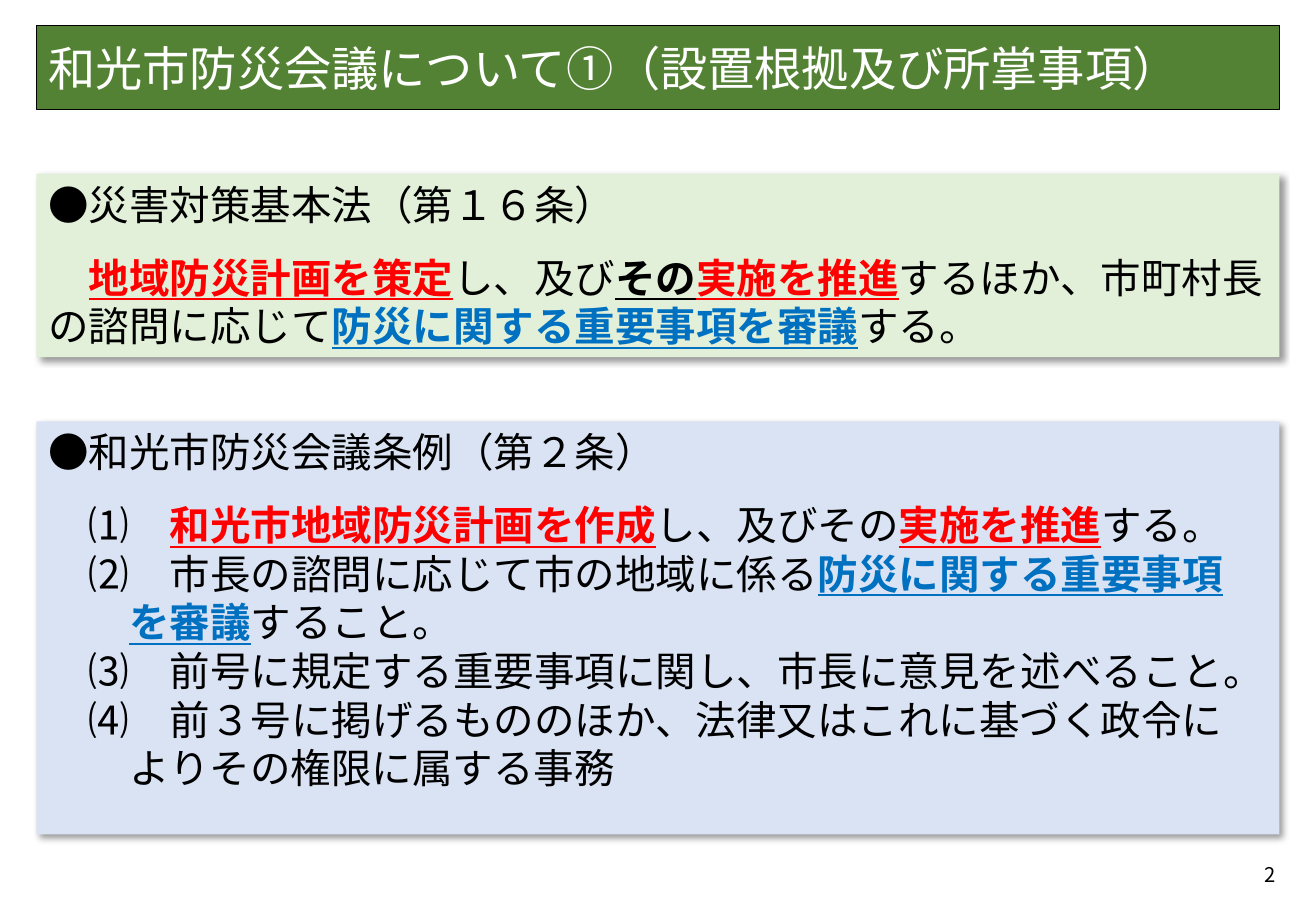
from lxml import etree
from pptx import Presentation
from pptx import util as u
from pptx.dml import color
from pptx.enum import lang, shapes, text
from pptx.oxml import ns

PX = 9144
FONT = "Noto Sans CJK JP"
BLACK = color.RGBColor(0x00, 0x00, 0x00)
WHITE = color.RGBColor(0xFF, 0xFF, 0xFF)
RED = color.RGBColor(0xFF, 0x00, 0x00)
BLUE = color.RGBColor(0x00, 0x70, 0xC0)
GREEN = color.RGBColor(0x54, 0x82, 0x35)
PALE_GREEN = color.RGBColor(0xE2, 0xF0, 0xD9)
PALE_BLUE = color.RGBColor(0xDA, 0xE3, 0xF3)

LEFT, WIDTH = 30, 1023
BODY_SIZE = 24
LINE_PITCH = u.Pt(28.8)
HEADING_GAP = u.Pt(14.4)
LINE_BREAK = "\n"

LAW = [
    ("地域防災計画を策定", RED), "し、及び", ("その", BLACK), ("実施を推進", RED),
    "するほか、市町村長の諮問に応じて", ("防災に関する重要事項を審議", BLUE), "する。",
]
ORDINANCE = [
    ["⑴　", ("和光市地域防災計画を作成", RED), "し、及びその", ("実施を推進", RED), "する。"],
    ["⑵　市長の諮問に応じて市の地域に係る", ("防災に関する重要事項", BLUE),
     LINE_BREAK, ("を審議", BLUE), "すること。"],
    ["⑶　前号に規定する重要事項に関し、市長に意見を述べること。"],
    ["⑷　前３号に掲げるもののほか、法律又はこれに基づく政令に",
     LINE_BREAK, "よりその権限に属する事務"],
]


def add_span(para, content, size=BODY_SIZE, ink=BLACK, emphasis=False):
    span = para.add_run()
    span.text = content
    font = span.font
    font.size = u.Pt(size)
    font.bold = font.underline = emphasis
    font.color.rgb = ink
    font.name = FONT
    font.language_id = lang.MSO_LANGUAGE_ID.JAPANESE
    etree.SubElement(span._r.get_or_add_rPr(), ns.qn("a:ea"), typeface=FONT)


def add_spans(para, spans):
    for span in spans:
        if span == LINE_BREAK:
            para.add_line_break()
        elif isinstance(span, str):
            add_span(para, span)
        else:
            add_span(para, span[0], ink=span[1], emphasis=True)


def set_layout(para, margin=0, indent=0, before=0):
    para.alignment = text.PP_ALIGN.LEFT
    para.line_spacing = LINE_PITCH
    para.space_before = before
    properties = para._p.get_or_add_pPr()
    properties.set("marL", str(u.Pt(margin)))
    properties.set("indent", str(u.Pt(indent)))


def add_box(page, top, height, fill, anchor):
    box = page.shapes.add_shape(shapes.MSO_SHAPE.RECTANGLE,
                                LEFT * PX, top * PX, WIDTH * PX, height * PX)
    box.shadow.inherit = False
    box.fill.solid()
    box.fill.fore_color.rgb = fill
    box.line.fill.background()
    box.text_frame.word_wrap = True
    box.text_frame.vertical_anchor = anchor
    return box


def add_shadow(box):
    effects = box._element.spPr.find(ns.qn("a:effectLst"))
    shadow = etree.SubElement(effects, ns.qn("a:outerShdw"), blurRad=str(u.Pt(4)),
                              dist=str(u.Pt(3)), dir="2700000", algn="tl", rotWithShape="0")
    tint = etree.SubElement(shadow, ns.qn("a:srgbClr"), val=str(BLACK))
    etree.SubElement(tint, ns.qn("a:alpha"), val="40000")


def add_title(page, content):
    box = add_box(page, 21, 69, GREEN, text.MSO_ANCHOR.MIDDLE)
    box.line.color.rgb = BLACK
    box.line.width = u.Pt(0.75)
    para = box.text_frame.paragraphs[0]
    para.alignment = text.PP_ALIGN.LEFT
    add_span(para, content, size=28, ink=WHITE)


def add_panel(page, top, height, fill, heading, items, margin, indent):
    box = add_box(page, top, height, fill, text.MSO_ANCHOR.TOP)
    add_shadow(box)
    frame = box.text_frame
    set_layout(frame.paragraphs[0])
    add_span(frame.paragraphs[0], heading)
    for index, spans in enumerate(items):
        para = frame.add_paragraph()
        set_layout(para, margin, indent, before=0 if index else HEADING_GAP)
        add_spans(para, spans)


def add_page_number(page, number):
    box = page.shapes.add_textbox(833 * PX, 700 * PX, 227 * PX, 40 * PX)
    box.text_frame.word_wrap = True
    box.text_frame.vertical_anchor = text.MSO_ANCHOR.MIDDLE
    para = box.text_frame.paragraphs[0]
    para.alignment = text.PP_ALIGN.RIGHT
    add_span(para, number, size=12)


def main():
    deck = Presentation()
    deck.slide_width, deck.slide_height = 1083 * PX, 750 * PX
    page = deck.slides.add_slide(deck.slide_layouts[6])
    add_page_number(page, "2")
    add_title(page, "和光市防災会議について①（設置根拠及び所掌事項）")
    add_panel(page, 347, 340, PALE_BLUE, "●和光市防災会議条例（第２条）", ORDINANCE,
              margin=2 * BODY_SIZE, indent=-BODY_SIZE)
    add_panel(page, 143, 151, PALE_GREEN, "●災害対策基本法（第１６条）", [LAW],
              margin=0, indent=BODY_SIZE)
    deck.save("out.pptx")


if __name__ == "__main__":
    main()
